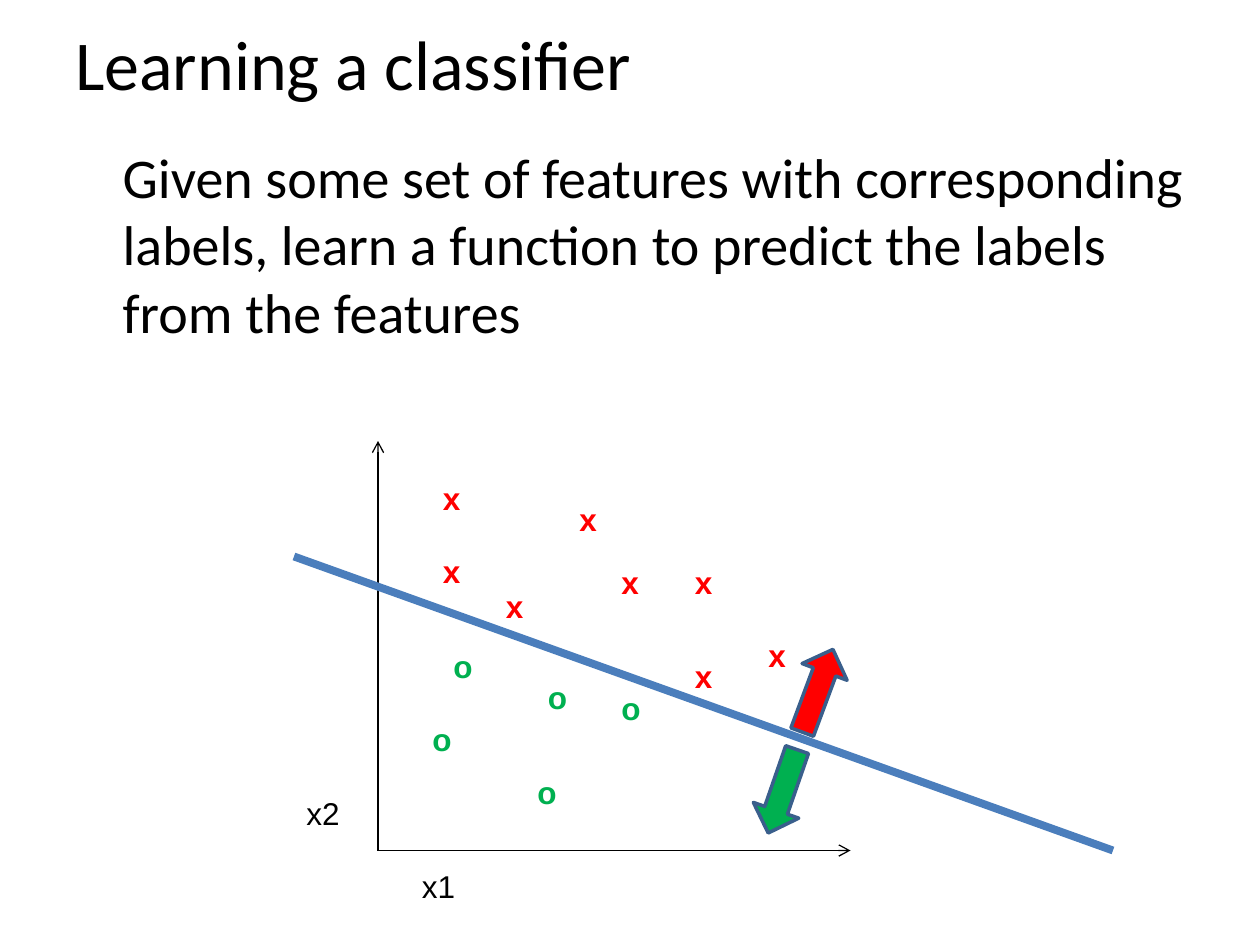
from dataclasses import dataclass
from lxml.etree import SubElement
from pptx import Presentation
from pptx.dml.color import RGBColor as RGB
from pptx.enum.shapes import MSO_CONNECTOR as LINK, MSO_SHAPE as SHAPE
from pptx.enum.text import MSO_ANCHOR as ANCHOR, MSO_AUTO_SIZE as FIT
from pptx.oxml.ns import qn
from pptx.util import Pt


@dataclass(frozen=True)
class Theme:
    black: RGB = RGB(0, 0, 0)
    red: RGB = RGB(0xFF, 0, 0)
    green: RGB = RGB(0, 0xB0, 0x50)
    blue: RGB = RGB(0x4B, 0x7E, 0xBC)
    edge: RGB = RGB(0x3A, 0x5F, 0x8C)
    head: str = "Calibri"
    mark: str = "Arial"
    title: int = 40
    body: int = 32
    label: int = 18


THEME = Theme()
CROSSES = [(348, 318), (390, 318), (390, 372), (432, 360),
           (246, 270), (246, 312), (324, 282), (282, 332)]
CIRCLES = [(348, 390), (240, 408), (252, 366), (300, 438), (306, 384)]


def add_text(slide, text, box, font, size, color=THEME.black):
    shape = slide.shapes.add_textbox(*map(Pt, box))
    frame = shape.text_frame
    frame.word_wrap = True
    para = frame.paragraphs[0]
    para.text = text
    para.font.name = font
    para.font.size = Pt(size)
    para.font.color.rgb = color
    return frame


def add_label(slide, text, spot, width, color=THEME.black, bold=False):
    frame = add_text(slide, text, (*spot, width, 29),
                     THEME.mark, THEME.label, color)
    frame.word_wrap = False
    frame.auto_size = FIT.SHAPE_TO_FIT_TEXT
    frame.paragraphs[0].font.bold = bold


def add_line(slide, start, end, color, width, arrow=False):
    line = slide.shapes.add_connector(LINK.STRAIGHT, *map(Pt, (*start, *end)))
    line.line.color.rgb = color
    line.line.width = Pt(width)
    if arrow:
        SubElement(line.line._get_or_add_ln(), qn("a:tailEnd"), type="arrow")
    SubElement(line._element.spPr, qn("a:effectLst"))


def add_arrow(slide, spot, angle, color):
    arrow = slide.shapes.add_shape(SHAPE.RIGHT_ARROW,
                                   *map(Pt, (*spot, 50.4, 27.4)))
    arrow.rotation = angle
    arrow.shadow.inherit = False
    arrow.fill.solid()
    arrow.fill.fore_color.rgb = color
    arrow.line.color.rgb = THEME.edge
    arrow.line.width = Pt(2)


def add_prose(slide):
    title = add_text(slide, "Learning a classifier", (36, 0, 648, 72),
                     THEME.head, THEME.title)
    title.vertical_anchor = ANCHOR.MIDDLE
    body = add_text(slide, "Given some set of features with corresponding "
                    "labels, learn a function to predict the labels "
                    "from the features", (36, 78, 648, 405),
                    THEME.head, THEME.body)
    body.paragraphs[0]._p.get_or_add_pPr().set("marL", str(Pt(27)))


def add_plot(slide):
    for spot in CROSSES:
        add_label(slide, "x", spot, 24.5, THEME.red, True)
    for spot in CIRCLES:
        add_label(slide, "o", spot, 26, THEME.green, True)
    origin = (216, 486)
    for end in [(216, 252), (486, 486)]:
        add_line(slide, origin, end, THEME.black, 0.75, arrow=True)
    add_label(slide, "x2", (168, 450), 34)
    add_label(slide, "x1", (234, 492), 34)
    add_line(slide, (168, 318), (636, 486), THEME.blue, 4.5)
    add_arrow(slide, (442, 381), 290.4, THEME.red)
    add_arrow(slide, (422, 438.5), 109.1, THEME.green)


def main():
    deck = Presentation()
    deck.slide_width, deck.slide_height = Pt(720), Pt(540)
    slide = deck.slides.add_slide(deck.slide_layouts[6])
    add_prose(slide)
    add_plot(slide)
    deck.save("out.pptx")


if __name__ == "__main__":
    main()
